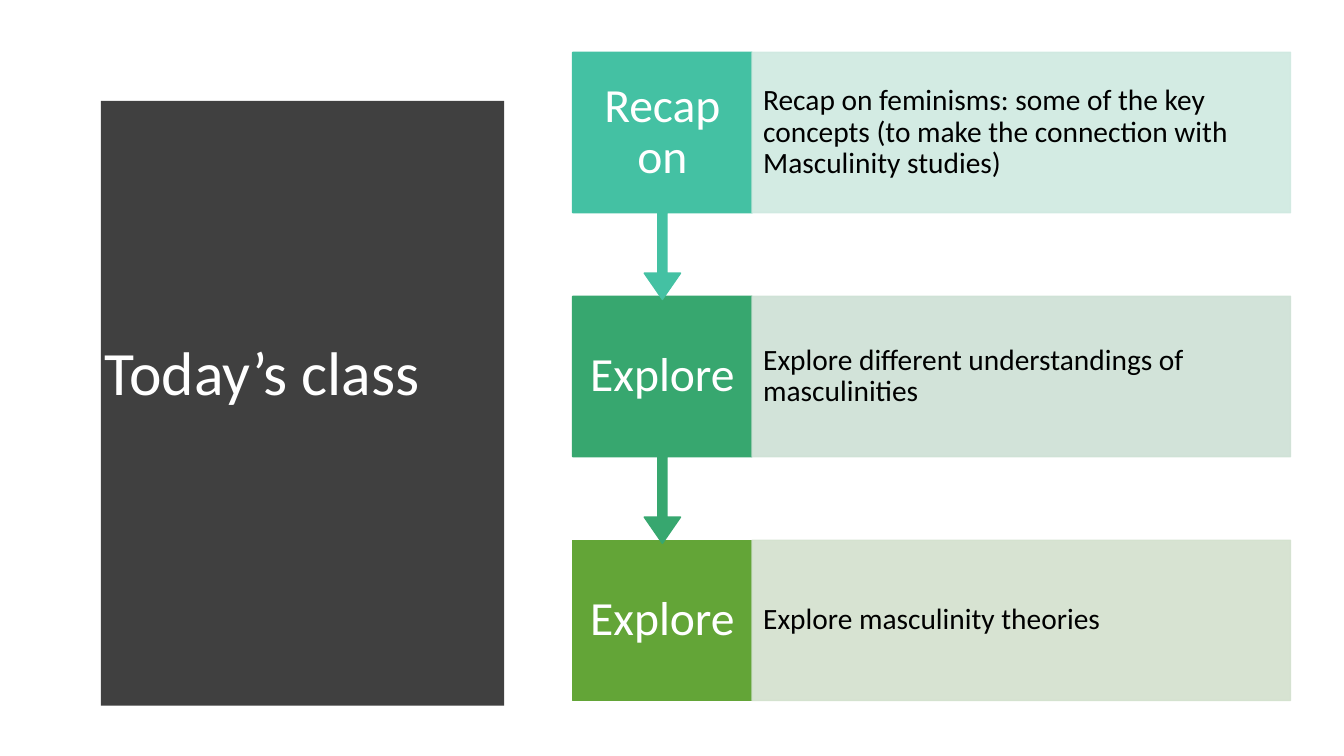
from lxml import etree
from pptx import Presentation
from pptx.dml.color import RGBColor
from pptx.enum.shapes import MSO_SHAPE
from pptx.enum.text import MSO_ANCHOR, PP_ALIGN
from pptx.oxml.ns import qn
from pptx.util import Inches, Pt

RECTANGLE = MSO_SHAPE.RECTANGLE
ARROW_CALLOUT = MSO_SHAPE.DOWN_ARROW_CALLOUT
MIDDLE = MSO_ANCHOR.MIDDLE
LEFT, CENTER = PP_ALIGN.LEFT, PP_ALIGN.CENTER

FONT = "Calibri"
TITLE = "Today’s class"
STEPS = [
    ("Recap on", "Recap on feminisms: some of the key concepts "
     "(to make the connection with Masculinity studies)", "teal", "pale teal"),
    ("Explore", "Explore different understandings of masculinities", "green", "pale green"),
    ("Explore", "Explore masculinity theories", "olive", "pale olive"),
]
COLORS = {
    "panel": "404040", "white": "FFFFFF", "black": "000000",
    "teal": "44C1A3", "green": "37A76F", "olive": "63A537",
    "pale teal": "CFE9E0", "pale green": "CEE1D5", "pale olive": "D3E1CE",
}

SLIDE_W, SLIDE_H = 13.33, 7.5
TOP, BOTTOM = 0.52, 6.96
PANEL_LEFT, PANEL_EDGE, PANEL_BULGE = 0.53, 5.08, 0.24
CURVE_STEPS = 40
STEP_LEFT, VERB_W, DETAIL_W = 5.68, 1.78, 5.34
STEP_H, STEP_PITCH, CALLOUT_H = 1.59, 2.42, 2.45
SHAFT_W, HEAD_W, HEAD_H = 0.09, 0.36, 0.26


def rgb(color):
    return RGBColor.from_string(COLORS[color])


def paint(shape, color, opacity=100):
    shape.shadow.inherit = False
    shape.fill.solid()
    shape.fill.fore_color.rgb = rgb(color)
    shape.line.color.rgb = rgb(color)
    shape.line.width = Pt(1)
    if opacity < 100:
        for swatch in shape._element.spPr.iter(qn("a:srgbClr")):
            etree.SubElement(swatch, qn("a:alpha"), val=str(opacity * 1000))


def write(shape, text, size, color, align, inset_x, inset_y):
    frame = shape.text_frame
    frame.word_wrap = True
    frame.vertical_anchor = MIDDLE
    frame.margin_left = frame.margin_right = Inches(inset_x)
    frame.margin_top = frame.margin_bottom = Inches(inset_y)
    paragraph = frame.paragraphs[0]
    paragraph.alignment = align
    paragraph.line_spacing = 0.9
    run = paragraph.add_run()
    run.text = text
    run.font.name = FONT
    run.font.size = Pt(size)
    run.font.color.rgb = rgb(color)


def add_box(shapes, preset, left, top, width, height):
    return shapes.add_shape(preset, Inches(left), Inches(top), Inches(width), Inches(height))


def add_panel(shapes):
    curve = []
    for i in range(CURVE_STEPS + 1):
        share = i / CURVE_STEPS
        bulge = PANEL_BULGE * (1 - (2 * share - 1) ** 2)
        curve.append((PANEL_EDGE + bulge, TOP + share * (BOTTOM - TOP)))
    outline = shapes.build_freeform(PANEL_LEFT, TOP, scale=Inches(1))
    outline.add_line_segments(curve + [(PANEL_LEFT, BOTTOM)], close=True)
    panel = outline.convert_to_shape()
    paint(panel, "panel")
    panel.line.fill.background()

    title = shapes.add_textbox(Inches(0.94), Inches(1.11), Inches(3.74), Inches(5.24))
    write(title, TITLE, 44, "white", LEFT, 0.1, 0.05)


def add_step(shapes, index):
    verb, detail, color, pale = STEPS[index]
    top = TOP + index * STEP_PITCH
    if index < len(STEPS) - 1:
        verb_box = add_box(shapes, ARROW_CALLOUT, STEP_LEFT, top, VERB_W, CALLOUT_H)
        proportions = (SHAFT_W / VERB_W, HEAD_W / 2 / VERB_W, HEAD_H / VERB_W, STEP_H / CALLOUT_H)
        for i, proportion in enumerate(proportions):
            verb_box.adjustments[i] = proportion
    else:
        verb_box = add_box(shapes, RECTANGLE, STEP_LEFT, top, VERB_W, STEP_H)
    paint(verb_box, color)
    write(verb_box, verb, 34, "white", CENTER, 0.13, 0.26)

    detail_box = add_box(shapes, RECTANGLE, STEP_LEFT + VERB_W, top, DETAIL_W, STEP_H)
    paint(detail_box, pale, opacity=90)
    write(detail_box, detail, 21, "black", LEFT, 0.11, 0.29)


def main():
    deck = Presentation()
    deck.slide_width, deck.slide_height = Inches(SLIDE_W), Inches(SLIDE_H)
    shapes = deck.slides.add_slide(deck.slide_layouts[6]).shapes
    add_panel(shapes)
    for index in reversed(range(len(STEPS))):
        add_step(shapes, index)
    deck.save("out.pptx")


if __name__ == "__main__":
    main()
